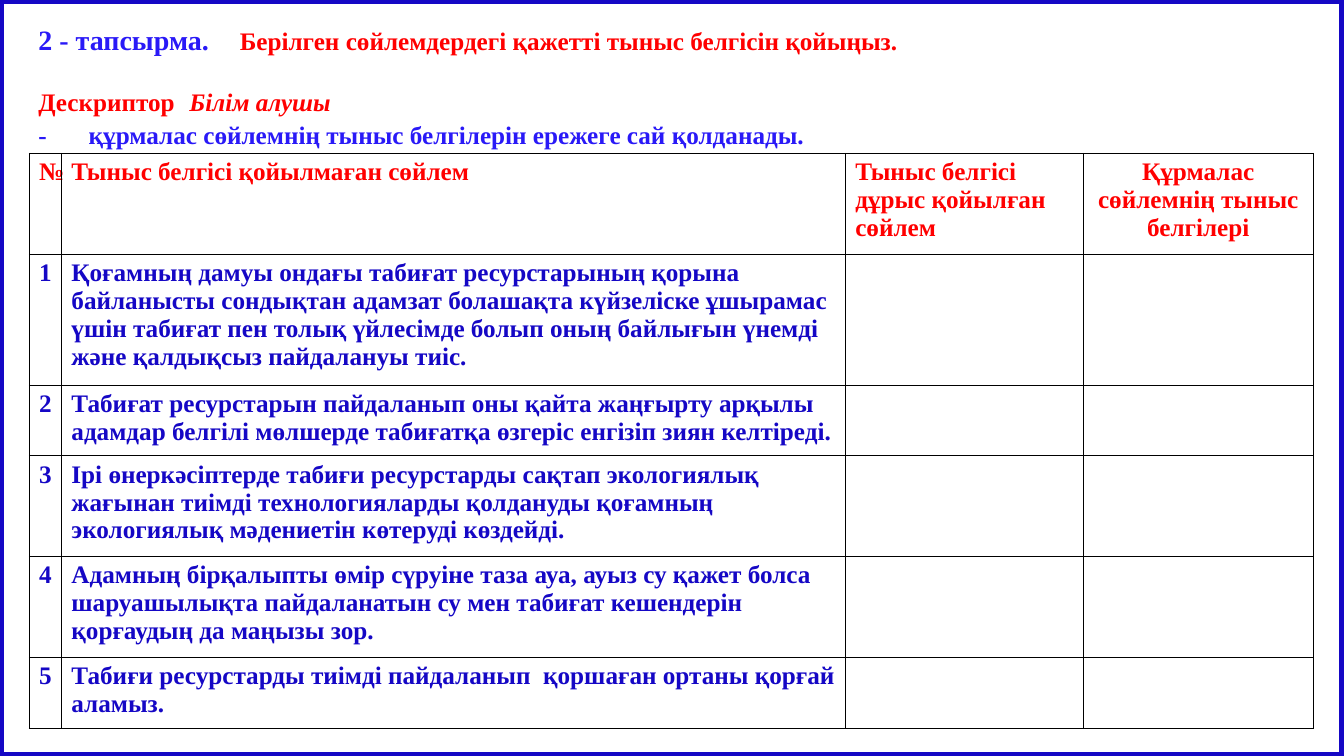
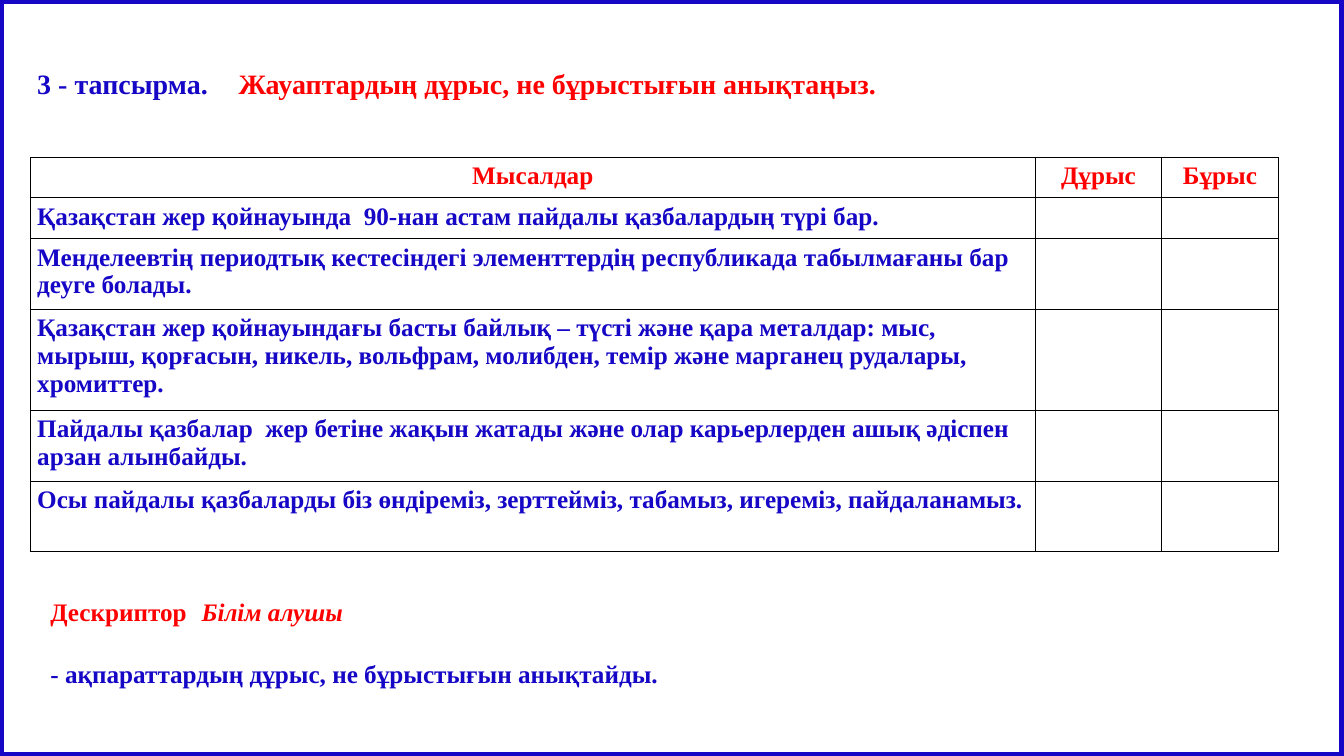
from pptx import Presentation
from pptx.dml.color import RGBColor
from pptx.enum.shapes import MSO_SHAPE
from pptx.enum.text import MSO_ANCHOR, MSO_AUTO_SIZE, PP_ALIGN
from pptx.oxml.ns import qn
from pptx.util import Inches, Pt
from lxml.etree import SubElement

SLIDE_WIDTH, SLIDE_HEIGHT = Inches(13.34), Inches(7.5)
FONT = "Times New Roman"
NAVY, BLUE, RED, WHITE, BLACK = "1507C5", "2919F7", "FF0000", "FFFFFF", "000000"
BORDER_WIDTH = Pt(0.45)
LINE_SPACING = 1.07
BLANK_LINE = 21.3


def color(value):
    return RGBColor.from_string(value)


def box(left, top, width, height):
    return (int(SLIDE_WIDTH * left / 100), int(SLIDE_HEIGHT * top / 100),
            int(SLIDE_WIDTH * width / 100), int(SLIDE_HEIGHT * height / 100))


def write(paragraph, text, size=18, fill=RED, bold=True, italic=False):
    run = paragraph.add_run()
    run.text = text
    run.font.name = FONT
    run.font.size = Pt(size)
    run.font.bold = bold
    run.font.italic = italic
    run.font.color.rgb = color(fill)


def format_paragraph(paragraph, tabs=(), space_before=0):
    properties = paragraph._p.get_or_add_pPr()
    properties.set("marL", "0")
    properties.set("indent", "0")
    SubElement(properties, qn("a:buNone"))
    if tabs:
        tab_list = SubElement(properties, qn("a:tabLst"))
        for position in tabs:
            SubElement(tab_list, qn("a:tab"), pos=str(Inches(position)), algn="l")
    paragraph.alignment = PP_ALIGN.LEFT
    paragraph.line_spacing = LINE_SPACING
    paragraph.space_before = Pt(space_before)


def place(shape, area, anchor=MSO_ANCHOR.TOP):
    shape.left, shape.top, shape.width, shape.height = area
    frame = shape.text_frame
    frame.word_wrap = True
    frame.auto_size = MSO_AUTO_SIZE.NONE
    frame.vertical_anchor = anchor
    return frame


def draw_frame(slide):
    shape = slide.shapes.add_shape(MSO_SHAPE.RECTANGLE, *box(0, 0, 99.93, 100))
    shape.shadow.inherit = False
    shape.fill.solid()
    shape.fill.fore_color.rgb = color(WHITE)
    shape.line.color.rgb = color(NAVY)
    shape.line.width = Pt(6)
    slide.shapes._spTree.insert(2, shape._element)


def draw_title(slide, area, number, task, tab, number_fill, task_size):
    frame = place(slide.shapes.title, area, MSO_ANCHOR.MIDDLE)
    paragraph = frame.paragraphs[0]
    format_paragraph(paragraph, [tab])
    write(paragraph, number + "\t", size=20, fill=number_fill)
    write(paragraph, task, size=task_size)


def draw_descriptor(slide, area, criterion, fill, gap=0):
    frame = place(slide.placeholders[1], area)
    heading = frame.paragraphs[0]
    format_paragraph(heading, [1, 2])
    write(heading, "Дескриптор\t")
    write(heading, "Білім алушы", italic=True)
    item = frame.add_paragraph()
    format_paragraph(item, [1, 2], gap)
    write(item, criterion, fill=fill)


def set_borders(cell):
    properties = cell._tc.get_or_add_tcPr()
    for side in ("a:lnL", "a:lnR", "a:lnT", "a:lnB"):
        line = SubElement(properties, qn(side), w=str(BORDER_WIDTH))
        SubElement(SubElement(line, qn("a:solidFill")), qn("a:srgbClr"), val=BLACK)


def draw_table(slide, area, columns, heights, rows, centered, margin=0.1):
    table = slide.shapes.add_table(len(rows), len(columns), *area).table
    table.first_row = table.horz_banding = False
    for column, share in zip(table.columns, columns):
        column.width = int(area[2] * share / sum(columns))
    for row, share in zip(table.rows, heights):
        row.height = int(area[3] * share / sum(heights))
    for row_index, texts in enumerate(rows):
        for column_index in range(len(columns)):
            cell = table.cell(row_index, column_index)
            set_borders(cell)
            cell.fill.background()
            cell.margin_left = cell.margin_right = Inches(margin)
            if column_index < len(texts):
                paragraph = cell.text_frame.paragraphs[0]
                if centered(row_index, column_index):
                    paragraph.alignment = PP_ALIGN.CENTER
                write(paragraph, texts[column_index], fill=NAVY if row_index else RED)


def build_punctuation_slide(slide):
    sentences = [
        "Қоғамның дамуы ондағы табиғат ресурстарының қорына байланысты сондықтан адамзат болашақта "
        "күйзеліске ұшырамас үшін табиғат пен толық үйлесімде болып оның байлығын үнемді және "
        "қалдықсыз пайдалануы тиіс.",
        "Табиғат ресурстарын пайдаланып оны қайта жаңғырту арқылы адамдар белгілі мөлшерде табиғатқа "
        "өзгеріс енгізіп зиян келтіреді.",
        "Ірі өнеркәсіптерде табиғи ресурстарды сақтап экологиялық жағынан тиімді технологияларды "
        "қолдануды қоғамның экологиялық мәдениетін көтеруді көздейді.",
        "Адамның бірқалыпты өмір сүруіне таза ауа, ауыз су қажет болса шаруашылықта пайдаланатын су "
        "мен табиғат кешендерін қорғаудың да маңызы зор.",
        "Табиғи ресурстарды тиімді пайдаланып  қоршаған ортаны қорғай аламыз.",
    ]
    header = ("№", "Тыныс белгісі қойылмаған сөйлем", "Тыныс белгісі дұрыс қойылған сөйлем",
              "Құрмалас сөйлемнің тыныс белгілері")
    numbered = [(str(number), text) for number, text in enumerate(sentences, 1)]
    draw_title(slide, box(2.1, 2.13, 94.68, 5.87), "2 - тапсырма.",
               "Берілген сөйлемдердегі қажетті тыныс белгісін қойыңыз.", 1.84, BLUE, 18)
    draw_descriptor(slide, box(2.1, 10.53, 94.68, 9.2),
                    "-\tқұрмалас сөйлемнің тыныс белгілерін ережеге сай қолданады.", BLUE)
    draw_table(slide, box(2.17, 20.27, 95.58, 76), [0.32, 7.78, 2.36, 2.29],
               [1, 1.3, 0.7, 1, 1, 0.7], [header] + numbered,
               lambda row, column: column in (0, 3))


def build_true_false_slide(slide):
    statements = [
        "Қазақстан жер қойнауында  90-нан астам пайдалы қазбалардың түрі бар.",
        "Менделеевтің периодтық кестесіндегі элементтердің республикада табылмағаны бар деуге болады.",
        "Қазақстан жер қойнауындағы басты байлық – түсті және қара металдар: мыс, мырыш, қорғасын, "
        "никель, вольфрам, молибден, темір және марганец рудалары, хромиттер.",
        "Пайдалы қазбалар  жер бетіне жақын жатады және олар карьерлерден ашық әдіспен арзан алынбайды.",
        "Осы пайдалы қазбаларды біз өндіреміз, зерттейміз, табамыз, игереміз, пайдаланамыз.",
    ]
    header = ("Мысалдар", "Дұрыс", "Бұрыс")
    draw_title(slide, box(2.02, 7.87, 64.99, 5.87), "3 - тапсырма.",
               "Жауаптардың дұрыс, не бұрыстығын анықтаңыз.", 2.11, NAVY, 20)
    draw_table(slide, box(2.25, 20.8, 92.88, 52.13), [9.97, 1.25, 1.16],
               [0.4, 0.4, 0.7, 1, 0.7, 0.7], [header] + [(text,) for text in statements],
               lambda row, column: row == 0, margin=0.07)
    draw_descriptor(slide, box(3, 77.87, 50, 13.33),
                    "- ақпараттардың дұрыс, не бұрыстығын анықтайды.", NAVY, BLANK_LINE)


def main():
    presentation = Presentation()
    presentation.slide_width, presentation.slide_height = SLIDE_WIDTH, SLIDE_HEIGHT
    for build in (build_punctuation_slide, build_true_false_slide):
        slide = presentation.slides.add_slide(presentation.slide_layouts[1])
        draw_frame(slide)
        build(slide)
    presentation.save("out.pptx")


if __name__ == "__main__":
    main()
